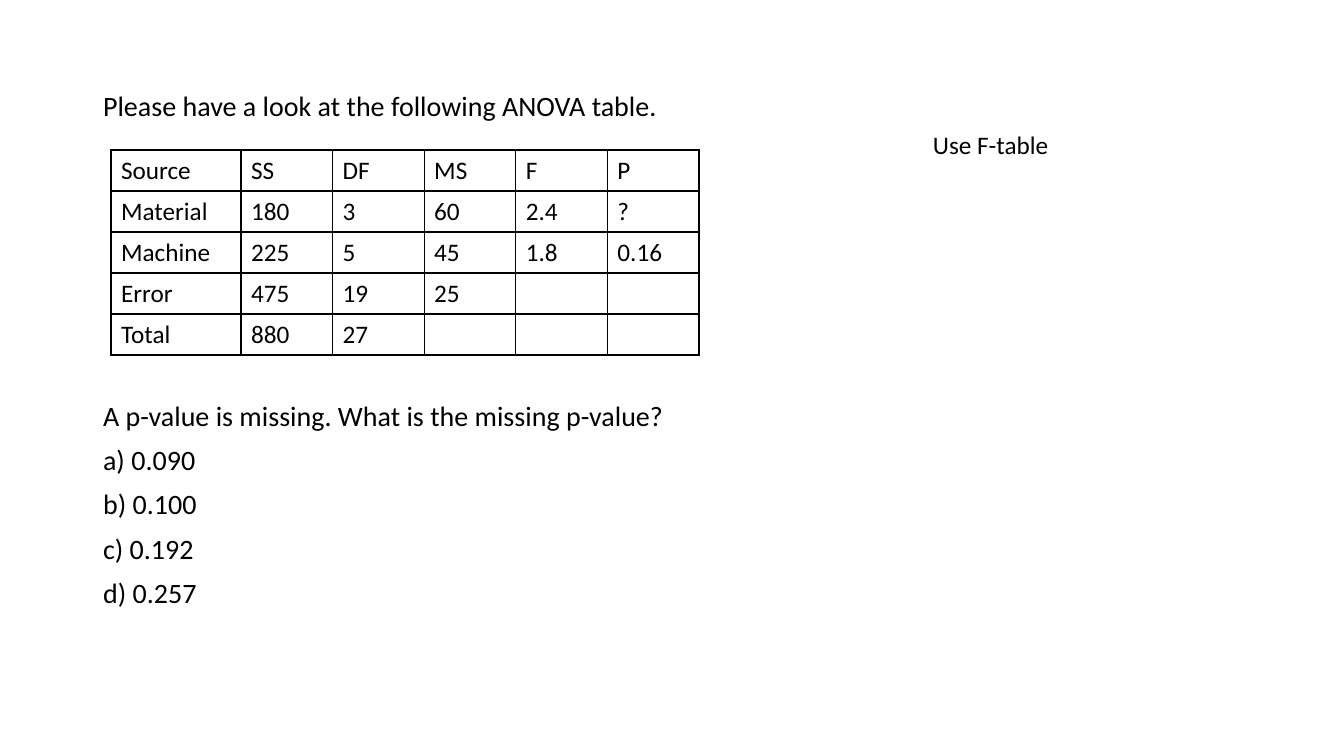
from lxml import etree
from pptx import Presentation
from pptx.dml.color import RGBColor
from pptx.enum.text import MSO_ANCHOR, MSO_AUTO_SIZE, PP_ALIGN
from pptx.oxml.ns import qn
from pptx.util import Pt

LEFT = PP_ALIGN.LEFT
TOP = MSO_ANCHOR.TOP
NO_AUTOFIT = MSO_AUTO_SIZE.NONE
FIT_SHAPE = MSO_AUTO_SIZE.SHAPE_TO_FIT_TEXT

INTRODUCTION = "Please have a look at the following ANOVA table."
QUESTION = "A p-value is missing. What is the missing p-value?"
ANSWERS = ["a) 0.090", "b) 0.100", "c) 0.192", "d) 0.257"]
HINT = "Use F-table"
ANOVA = [
    ["Source", "SS", "DF", "MS", "F", "P"],
    ["Material", "180", "3", "60", "2.4", "?"],
    ["Machine", "225", "5", "45", "1.8", "0.16"],
    ["Error", "475", "19", "25", "", ""],
    ["Total", "880", "27", "", "", ""],
]

PX = 914400 / 100.8
SLIDE_SIZE = (1344, 756)
BODY_BOX = (93, 87, 1159, 595)
TABLE_BOX = (111, 150, 588, 205)
HINT_BOX = (923, 124, 274, 40)
SOURCE_WIDTH = 130
PARAGRAPH_GAP = 10
TABLE_GAP = 200  # points left free for the table above the question
BLACK = "000000"
FONT = "Calibri"


def px(length):
    return round(length * PX)


def color(hex_string):
    return RGBColor.from_string(hex_string)


def apply(target, **values):
    for name, value in values.items():
        setattr(target, name, value)


def write(paragraph, text, size):
    paragraph.alignment = LEFT
    if text:
        run = paragraph.add_run()
        run.text = text
        apply(run.font, name=FONT, size=Pt(size), bold=False)
        run.font.color.rgb = color(BLACK)


def draw_borders(cell):
    properties = cell._tc.get_or_add_tcPr()
    for position, side in enumerate(("lnL", "lnR", "lnT", "lnB")):
        line = etree.Element(qn(f"a:{side}"), w=str(Pt(1)))
        fill = etree.SubElement(line, qn("a:solidFill"))
        etree.SubElement(fill, qn("a:srgbClr"), val=BLACK)
        properties.insert(position, line)


def add_body(slide):
    body = slide.placeholders[1]
    left, top, width, height = map(px, BODY_BOX)
    apply(body, left=left, top=top, width=width, height=height)
    frame = body.text_frame
    apply(frame, word_wrap=True, auto_size=NO_AUTOFIT, vertical_anchor=TOP)
    for index, text in enumerate([INTRODUCTION, QUESTION, *ANSWERS]):
        paragraph = frame.add_paragraph() if index else frame.paragraphs[0]
        write(paragraph, text, 20)
        gap = TABLE_GAP if text == QUESTION else PARAGRAPH_GAP
        apply(paragraph, line_spacing=0.9, space_before=Pt(gap), space_after=Pt(0))
        properties = paragraph._p.get_or_add_pPr()
        properties.set("marL", "0")
        properties.set("indent", "0")
        etree.SubElement(properties, qn("a:buNone"))


def add_anova_table(slide):
    rows, columns = len(ANOVA), len(ANOVA[0])
    table = slide.shapes.add_table(rows, columns, *map(px, TABLE_BOX)).table
    apply(table, first_row=False, horz_banding=False)
    value_width = (TABLE_BOX[2] - SOURCE_WIDTH) / (columns - 1)
    for index, column in enumerate(table.columns):
        column.width = px(value_width if index else SOURCE_WIDTH)
    for row, texts in zip(table.rows, ANOVA):
        row.height = px(TABLE_BOX[3] / rows)
        for cell, text in zip(row.cells, texts):
            cell.fill.background()
            draw_borders(cell)
            write(cell.text_frame.paragraphs[0], text, 18)


def add_hint(slide):
    frame = slide.shapes.add_textbox(*map(px, HINT_BOX)).text_frame
    apply(frame, word_wrap=True, auto_size=FIT_SHAPE)
    write(frame.paragraphs[0], HINT, 18)


def main():
    presentation = Presentation()
    width, height = map(px, SLIDE_SIZE)
    apply(presentation, slide_width=width, slide_height=height)
    slide = presentation.slides.add_slide(presentation.slide_layouts[1])
    title = slide.shapes.title.element
    title.getparent().remove(title)
    add_body(slide)
    add_anova_table(slide)
    add_hint(slide)
    presentation.save("out.pptx")


if __name__ == "__main__":
    main()
